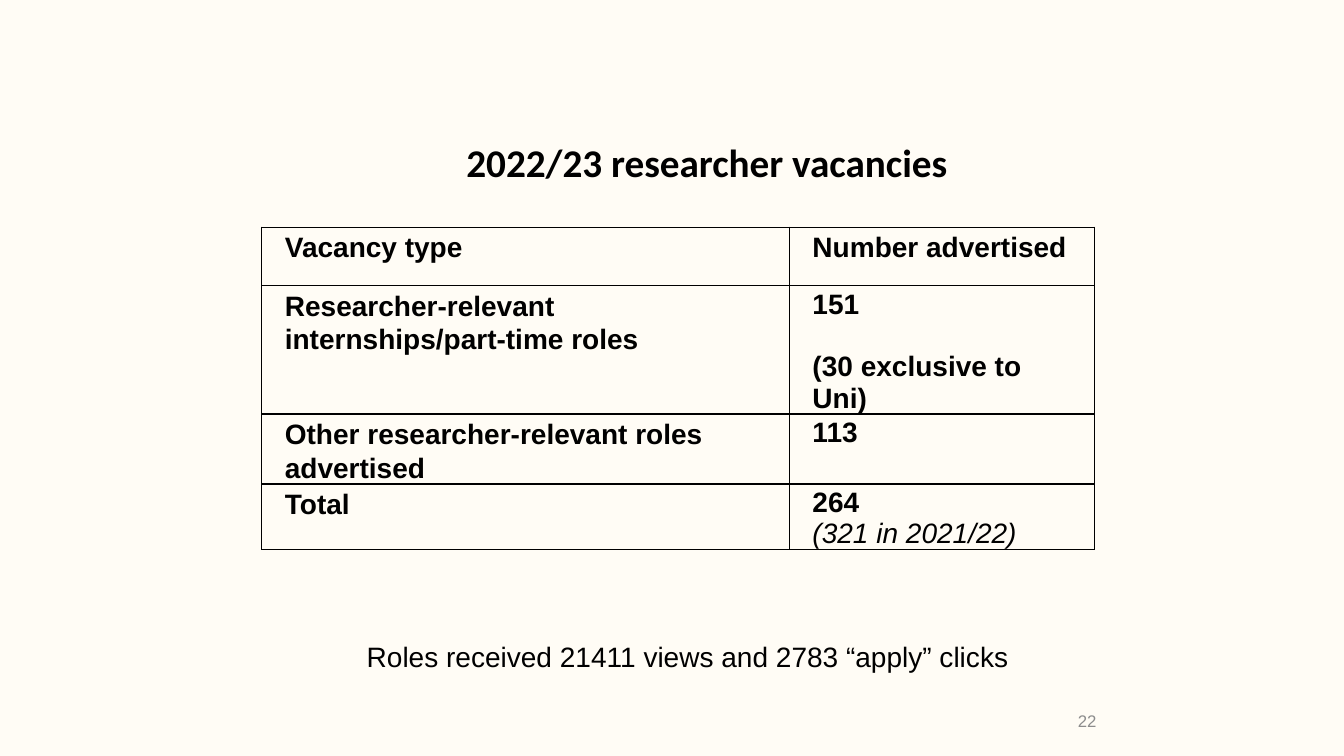
from dataclasses import dataclass

from lxml import etree
from pptx import Presentation
from pptx.dml.color import RGBColor
from pptx.enum.text import MSO_ANCHOR, MSO_AUTO_SIZE, PP_ALIGN
from pptx.oxml.ns import qn
from pptx.util import Inches, Pt

LEFT, RIGHT = PP_ALIGN.LEFT, PP_ALIGN.RIGHT
TOP, MIDDLE = MSO_ANCHOR.TOP, MSO_ANCHOR.MIDDLE
NO_AUTOFIT = MSO_AUTO_SIZE.NONE
TITLE_ONLY = 5
SLIDE_W, SLIDE_H = Inches(13.33), Inches(7.5)


@dataclass(frozen=True)
class Theme:
    background: str = "FFFCF5"
    ink: str = "000000"
    muted: str = "8C8C8C"
    heading_font: str = "Calibri"
    body_font: str = "Arial"
    title_size: int = 28
    body_size: int = 20
    number_size: int = 12
    border: int = 1


THEME = Theme()


@dataclass(frozen=True)
class Box:
    x: float
    y: float
    w: float
    h: float

    def emu(self) -> tuple[int, int, int, int]:
        return across(self.x), down(self.y), across(self.w), down(self.h)


@dataclass(frozen=True)
class Style:
    size: int = THEME.body_size
    font: str = THEME.body_font
    color: str = THEME.ink
    bold: bool = False
    italic: bool = False


@dataclass(frozen=True)
class Para:
    text: str
    style: Style
    align: PP_ALIGN = LEFT
    line: float = 1.0
    after: float = 0


@dataclass(frozen=True)
class Label:
    box: Box
    para: Para
    anchor: MSO_ANCHOR = TOP


BOLD = Style(bold=True)
ITALIC = Style(italic=True)


def heading(text: str) -> list[Para]:
    return [Para(text, BOLD, line=1.07, after=8)]


TITLE = Label(
    Box(33.95, 17.6, 38, 7.6),
    Para("2022/23 researcher vacancies",
         Style(THEME.title_size, THEME.heading_font, bold=True)),
)
LABELS = [
    Label(Box(26.55, 84, 52.3, 5.87),
          Para("Roles received 21411 views and 2783 “apply” clicks", Style())),
    Label(Box(65.45, 92.67, 16.88, 5.33),
          Para("22", Style(THEME.number_size, color=THEME.muted), RIGHT, after=6),
          MIDDLE),
]
TABLE_X, TABLE_Y = 19.47, 30.05
COLUMNS = [39.26, 22.73]
ROW_HEIGHTS = [7.75, 16.93, 9.25, 8.6]
VACANCIES = [
    [heading("Vacancy type"), heading("Number advertised")],
    [heading("Researcher-relevant internships/part-time roles"),
     [Para("151", BOLD, after=22.5), Para("(30 exclusive to Uni)", BOLD)]],
    [heading("Other researcher-relevant roles advertised"), [Para("113", BOLD)]],
    [heading("Total"), [Para("264", BOLD), Para("(321 in 2021/22)", ITALIC)]],
]


def across(percent: float) -> int:
    return round(SLIDE_W * percent / 100)


def down(percent: float) -> int:
    return round(SLIDE_H * percent / 100)


def write(tf, paras: list[Para]) -> None:
    for i, para in enumerate(paras):
        p = tf.add_paragraph() if i else tf.paragraphs[0]
        p.alignment, p.line_spacing = para.align, para.line
        p.space_before, p.space_after = Pt(0), Pt(para.after)
        r = p.add_run()
        r.text = para.text
        f = r.font
        f.name, f.size = para.style.font, Pt(para.style.size)
        f.bold, f.italic = para.style.bold, para.style.italic
        f.color.rgb = RGBColor.from_string(para.style.color)


def fill_label(sp, label: Label) -> None:
    sp.left, sp.top, sp.width, sp.height = label.box.emu()
    tf = sp.text_frame
    tf.word_wrap, tf.auto_size = True, NO_AUTOFIT
    tf.vertical_anchor = label.anchor
    write(tf, [label.para])


def add_borders(cell) -> None:
    tc_pr = cell._tc.get_or_add_tcPr()
    for i, side in enumerate(("lnL", "lnR", "lnT", "lnB")):
        ln = etree.Element(qn(f"a:{side}"), w=str(Pt(THEME.border)))
        fill = etree.SubElement(ln, qn("a:solidFill"))
        etree.SubElement(fill, qn("a:srgbClr"), val=THEME.ink)
        tc_pr.insert(i, ln)


def add_vacancy_table(s) -> None:
    box = Box(TABLE_X, TABLE_Y, sum(COLUMNS), sum(ROW_HEIGHTS))
    table = s.shapes.add_table(len(ROW_HEIGHTS), len(COLUMNS), *box.emu()).table
    table.first_row = table.horz_banding = False
    for column, width in zip(table.columns, COLUMNS):
        column.width = across(width)
    for row, height, contents in zip(table.rows, ROW_HEIGHTS, VACANCIES):
        row.height = down(height)
        for cell, paras in zip(row.cells, contents):
            cell.margin_left = cell.margin_right = Inches(0.23)
            cell.margin_top, cell.margin_bottom = Inches(0.03), 0
            cell.vertical_anchor = TOP
            cell.fill.background()
            add_borders(cell)
            write(cell.text_frame, paras)


def main() -> None:
    prs = Presentation()
    prs.slide_width, prs.slide_height = SLIDE_W, SLIDE_H
    s = prs.slides.add_slide(prs.slide_layouts[TITLE_ONLY])
    bg = s.background.fill
    bg.solid()
    bg.fore_color.rgb = RGBColor.from_string(THEME.background)
    fill_label(s.shapes.title, TITLE)
    add_vacancy_table(s)
    for label in LABELS:
        fill_label(s.shapes.add_textbox(*label.box.emu()), label)
    prs.save("out.pptx")


if __name__ == "__main__":
    main()
